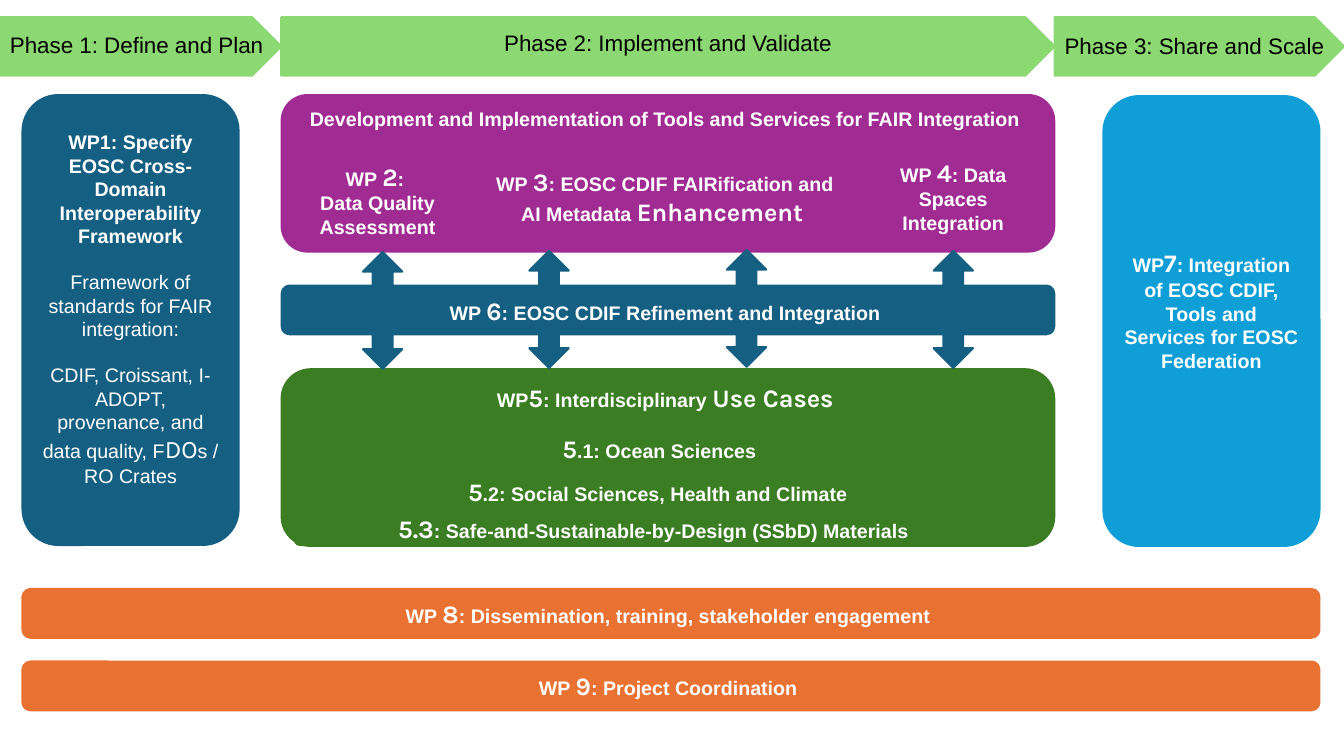
from pptx import Presentation
from pptx.dml.color import RGBColor
from pptx.enum.shapes import MSO_SHAPE
from pptx.enum.text import MSO_ANCHOR, PP_ALIGN
from pptx.util import Pt

ROUND, ARROW, PHASE = MSO_SHAPE.ROUNDED_RECTANGLE, MSO_SHAPE.UP_DOWN_ARROW, MSO_SHAPE.PENTAGON
TOP, MIDDLE = MSO_ANCHOR.TOP, MSO_ANCHOR.MIDDLE
LEFT, CENTER = PP_ALIGN.LEFT, PP_ALIGN.CENTER

PX = 9144  # 100 px to the inch
THEME = {
    "teal": "156082", "green": "3A7D22", "purple": "A02B93", "orange": "E97132",
    "blue": "0F9ED5", "lime": "8CD872", "white": "FFFFFF", "black": "000000",
    "body": ("Arial", 14), "accent": ("Karla", 18), "phase": ("Arial", 16),
}

prs = Presentation()
prs.slide_width, prs.slide_height = 1333 * PX, 750 * PX
s = prs.slides.add_slide(prs.slide_layouts[6])


def add_block(kind, box, color, line=1):
    sp = s.shapes.add_shape(kind, *[v * PX for v in box])
    sp.shadow.inherit = False
    sp.fill.solid()
    sp.fill.fore_color.rgb = sp.line.color.rgb = RGBColor.from_string(THEME[color])
    sp.line.width = Pt(line)
    return sp


def write(sp, text, anchor=MIDDLE, align=CENTER, style="body", color="white", bold=True):
    """One paragraph per line; parts between bars take the accent style."""
    tf = sp.text_frame
    tf.word_wrap = True
    tf.vertical_anchor = anchor
    for i, row in enumerate(text.split("\n")):
        p = tf.paragraphs[0] if i == 0 else tf.add_paragraph()
        p.alignment = align
        for j, part in enumerate(row.split("|")):
            if part:
                r = p.add_run()
                r.text = part
                name, size = THEME["accent" if j % 2 else style]
                r.font.name, r.font.size, r.font.bold = name, Pt(size), bold
                r.font.color.rgb = RGBColor.from_string(THEME[color])
    return tf


# WP1 column: bold heading, plain paragraphs one line apart
tf = write(add_block(ROUND, (22, 94, 215, 447), "teal"),
           "WP1: Specify EOSC Cross-Domain Interoperability Framework\n"
           "Framework of standards for FAIR integration:\n"
           "CDIF, Croissant, I-ADOPT, provenance, and data quality, F|DO|s / RO Crates")
tf.margin_bottom = 27 * PX
for p in tf.paragraphs[1:]:
    p.space_before = Pt(16)
    for r in p.runs:
        r.font.bold = False

# Work packages 2 to 5: panels, then the items on them
for box, color, anchor, text in [
    ((279, 366, 767, 176), "green", TOP, "WP|5|: Interdisciplinary |Use Cases| "),
    ((299, 429, 710, 32), "green", MIDDLE, "|5|.1: Ocean Sciences"),
    ((296, 470, 713, 35), "green", MIDDLE, "|5|.2: Social Sciences, Health and Climate"),
    ((292, 507, 718, 34), "green", MIDDLE,
     "|5.3|: Safe-and-Sustainable-by-Design (SSbD) Materials "),
    ((279, 94, 767, 156), "purple", TOP,
     "Development and Implementation of Tools and Services for FAIR Integration "),
    ((296, 151, 157, 94), "purple", MIDDLE, "WP |2|: \nData Quality Assessment"),
    ((867, 147, 157, 94), "purple", MIDDLE, "WP |4|: Data Spaces Integration"),
    ((469, 148, 381, 94), "purple", MIDDLE,
     "WP |3|: EOSC CDIF FAIRification and AI Metadata |Enhancement| "),
]:
    write(add_block(ROUND, box, color), text, anchor)

# Arrows between tools and use cases, behind the WP6 bar
for x, y in [(360, 250), (525, 249), (721, 248), (926, 249)]:
    add_block(ARROW, (x, y, 39, 116), "teal", 1.5)

# Full-width bars
for x, y, w, color, text in [
    (279, 283, 767, "teal", "WP |6|: EOSC CDIF Refinement and Integration "),
    (22, 584, 1287, "orange", "WP |8|: Dissemination, training, stakeholder engagement "),
    (22, 656, 1287, "orange", "WP |9|: Project Coordination "),
]:
    write(add_block(ROUND, (x, y, w, 49), color), text)

# WP7 column
tf = write(add_block(ROUND, (1094, 95, 215, 447), "blue"),
           "WP|7|: Integration of EOSC CDIF, Tools and Services for EOSC Federation")
tf.margin_bottom = 27 * PX

# Phase banner with its labels
for x, w, label_y, align, text in [
    (0, 279, 26, LEFT, "Phase 1: Define and Plan"),
    (279, 767, 24, CENTER, "Phase 2: Implement and Validate"),
    (1046, 287, 27, LEFT, "Phase 3: Share and Scale"),
]:
    add_block(PHASE, (x, 17, w, 58), "lime", 1.5)
    label = s.shapes.add_textbox(x * PX, label_y * PX, w * PX, 37 * PX)
    write(label, text, TOP, align, "phase", "black", False)

prs.save("out.pptx")
